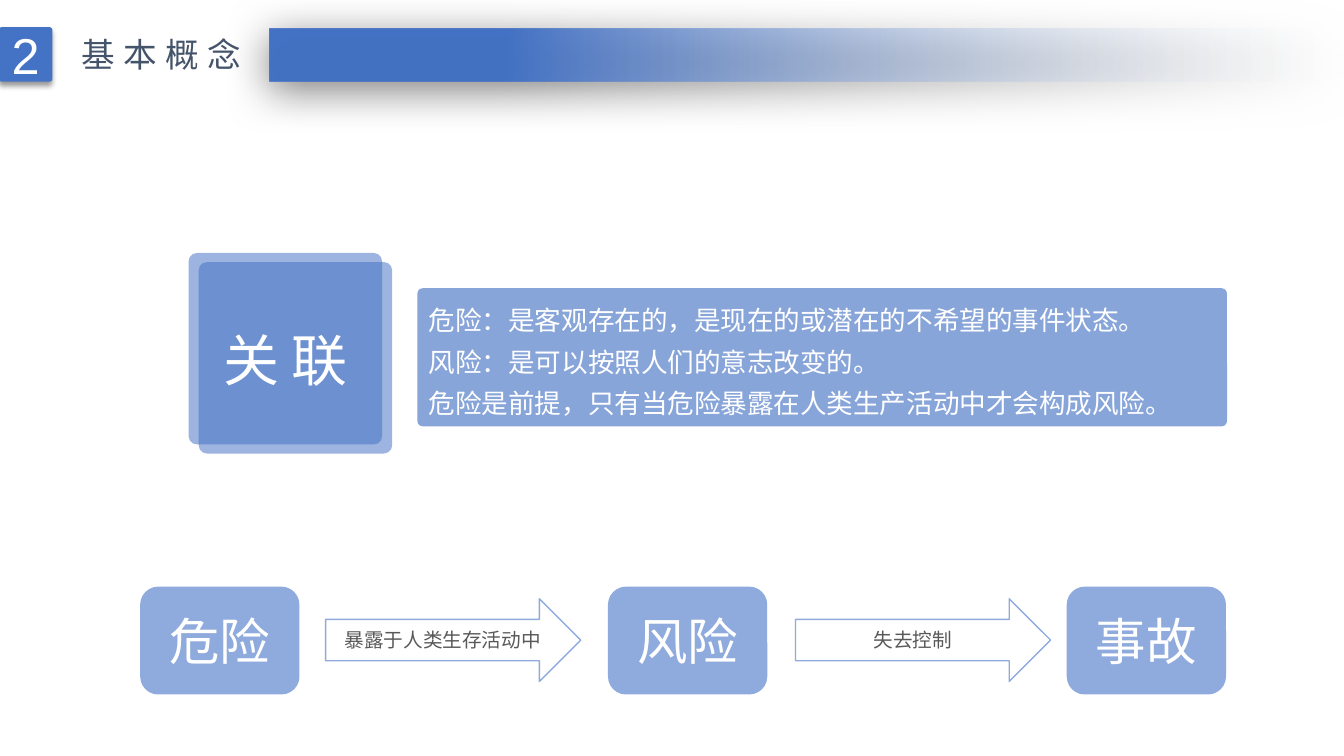
from lxml.etree import SubElement
from pptx import Presentation
from pptx.dml.color import RGBColor
from pptx.enum.shapes import MSO_SHAPE as Shape
from pptx.enum.text import MSO_ANCHOR as Anchor, MSO_AUTO_SIZE as Fit, PP_ALIGN as Align
from pptx.oxml.ns import qn
from pptx.util import Inches, Pt

BLUE = RGBColor(0x44, 0x72, 0xC4)
PALE = RGBColor(0x8F, 0xAA, 0xDC)
WHITE = RGBColor(0xFF, 0xFF, 0xFF)
MIST = RGBColor(0xF7, 0xFA, 0xFD)
SLATE = RGBColor(0x44, 0x54, 0x6A)
GREY = RGBColor(0x59, 0x59, 0x59)
SANS = "Noto Sans CJK JP"

FACTS = [
    "危险：是客观存在的，是现在的或潜在的不希望的事件状态。",
    "风险：是可以按照人们的意志改变的。",
    "危险是前提，只有当危险暴露在人类生产活动中才会构成风险。",
]
STEPS = [(1.39, "危险"), (6.03, "风险"), (10.58, "事故")]
LINKS = [(3.23, "暴露于人类生存活动中"), (7.89, "失去控制")]


def add_box(shapes, kind, box, fill=None, alpha=None, round_by=None):
    """Add a preset shape without line or shadow; alpha is opacity in percent."""
    shape = shapes.add_shape(kind, *map(Inches, box))
    shape.shadow.inherit = False
    shape.line.fill.background()
    if round_by is not None:
        shape.adjustments[0] = round_by
    if fill is None:
        shape.fill.background()
    else:
        shape.fill.solid()
        shape.fill.fore_color.rgb = fill
    if alpha is not None:
        fade(shape, [alpha])
    return shape


def fade(shape, alphas):
    """Set the opacity of each fill colour in turn, in percent."""
    colors = shape._element.spPr.iter(qn("a:srgbClr"))
    for color, alpha in zip(colors, alphas):
        SubElement(color, qn("a:alpha"), val=str(alpha * 1000))


def add_shadow(shape, alpha, blur, dist, angle):
    effects = shape._element.spPr.find(qn("a:effectLst"))
    outer = SubElement(effects, qn("a:outerShdw"), blurRad=str(Pt(blur)),
                       dist=str(Pt(dist)), dir=str(angle * 60000),
                       algn="t", rotWithShape="0")
    color = SubElement(outer, qn("a:srgbClr"), val="000000")
    SubElement(color, qn("a:alpha"), val=str(alpha * 1000))


def write(shape, lines, size, color, font="Arial", align=Align.CENTER,
          anchor=Anchor.MIDDLE, spacing=None, track=None):
    """Fill a shape with paragraphs; track is letter spacing in points."""
    frame = shape.text_frame
    frame.word_wrap = True
    frame.vertical_anchor = anchor
    for i, line in enumerate(lines):
        para = frame.add_paragraph() if i else frame.paragraphs[0]
        para.alignment = align
        if spacing:
            para.line_spacing = spacing
        run = para.add_run()
        run.text = line
        run.font.size = Pt(size)
        run.font.name = font
        run.font.color.rgb = color
        props = run._r.get_or_add_rPr()
        SubElement(props, qn("a:ea"), typeface=SANS)
        if track:
            props.set("spc", str(track * 100))
    return frame


def add_header(shapes):
    bar = add_box(shapes, Shape.RECTANGLE, (2.67, 0.28, 10.67, 0.53))
    bar.fill.gradient()
    bar.fill.gradient_angle = 180
    for stop, place, color in zip(bar.fill.gradient_stops, (0, 0.78), (MIST, BLUE)):
        stop.position = place
        stop.color.rgb = color
    fade(bar, [0])
    add_shadow(bar, 50, 31, 6, 97)

    badge = add_box(shapes, Shape.ROUNDED_RECTANGLE, (-0.01, 0.27, 0.53, 0.54),
                    BLUE, round_by=0.05)
    add_shadow(badge, 40, 4, 3, 90)
    write(badge, ["2"], 36, WHITE)

    title = shapes.add_textbox(*map(Inches, (0.71, 0.29, 1.87, 0.5)))
    frame = write(title, ["基本概念"], 24, SLATE, align=Align.LEFT,
                  anchor=Anchor.TOP, track=6)
    frame.word_wrap = False
    frame.auto_size = Fit.SHAPE_TO_FIT_TEXT


def add_topic(shapes):
    pair = shapes.add_group_shape().shapes
    for left, top in ((1.97, 2.6), (1.87, 2.51)):
        card = add_box(pair, Shape.ROUNDED_RECTANGLE, (left, top, 1.92, 1.9),
                       BLUE, 53, 0.044)
    write(card, ["关 联"], 40, WHITE, spacing=1.3)

    panel = add_box(shapes, Shape.ROUNDED_RECTANGLE, (4.14, 2.86, 8.03, 1.37),
                    BLUE, 63, 0.038)
    frame = write(panel, FACTS, 19, WHITE, align=Align.LEFT,
                  anchor=Anchor.TOP, spacing=1.3)
    frame.auto_size = Fit.SHAPE_TO_FIT_TEXT


def add_flow(shapes):
    for left, name in STEPS:
        step = add_box(shapes, Shape.ROUNDED_RECTANGLE, (left, 5.82, 1.58, 1.07), PALE)
        write(step, [name], 36, WHITE, SANS)
    for left, label in LINKS:
        arrow = add_box(shapes, Shape.RIGHT_ARROW, (left, 5.94, 2.53, 0.82))
        arrow.line.color.rgb = PALE
        arrow.line.width = Pt(1)
        write(arrow, [label], 14, GREY, "TeX Gyre Adventor")


def main():
    deck = Presentation()
    deck.slide_width = Inches(13.33)
    deck.slide_height = Inches(7.5)
    shapes = deck.slides.add_slide(deck.slide_layouts[6]).shapes
    add_topic(shapes)
    add_header(shapes)
    add_flow(shapes)
    deck.save("out.pptx")


if __name__ == "__main__":
    main()
